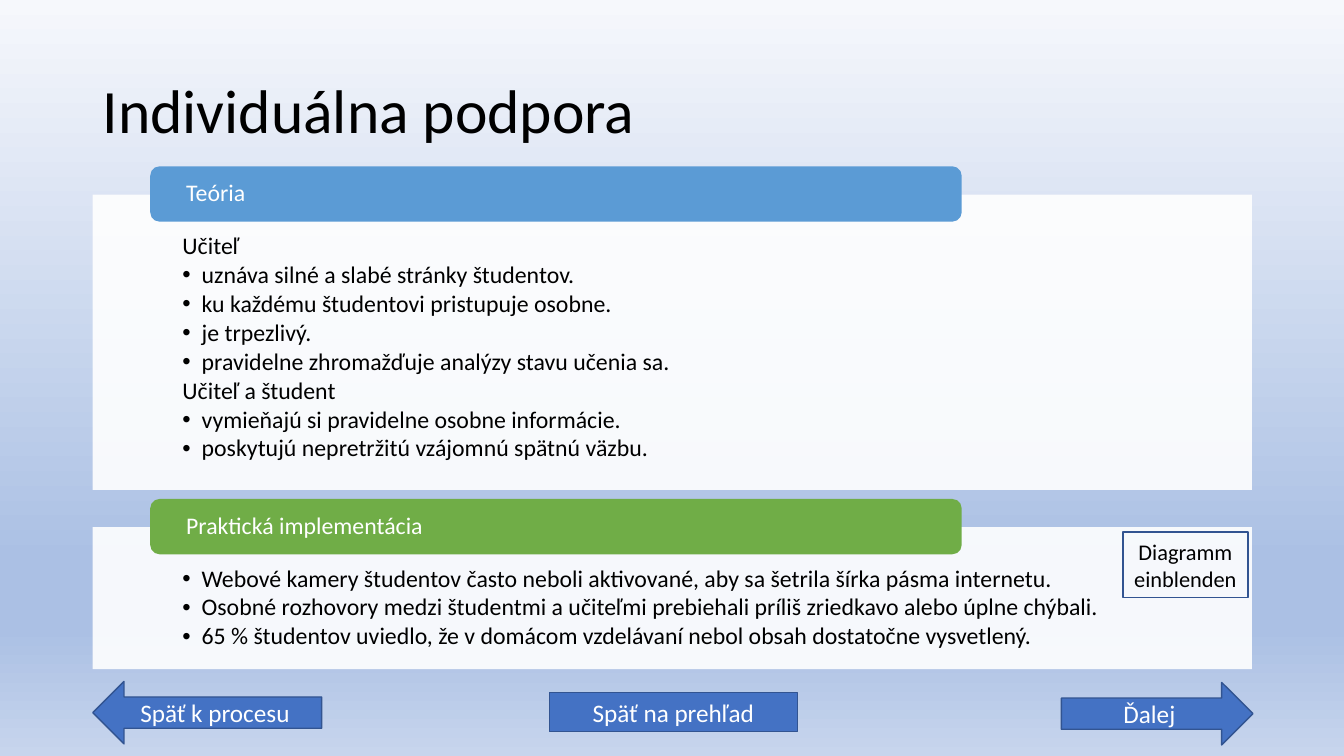
from lxml import etree
from pptx import Presentation
from pptx.dml.color import RGBColor
from pptx.enum.shapes import MSO_SHAPE as SHAPE
from pptx.enum.text import MSO_ANCHOR as ANCHOR, PP_ALIGN as ALIGN
from pptx.oxml import parse_xml
from pptx.oxml.ns import nsdecls, qn
from pptx.util import Inches, Pt

FONT = "Calibri"
BLACK, WHITE = "000000", "FFFFFF"
BLUE, GREEN, BUTTON, OUTLINE = "5B9BD5", "70AD47", "4472C4", "325491"
WIDTH, HEIGHT = Inches(13.333), Inches(7.5)
LEFT, FULL = 6.9, 86.25  # content column, in percent of the slide width
HANG = Inches(0.19)

BACKGROUND = [(0, "F6F8FC"), (74, "ABC0E4"), (83, "ABC0E4"), (100, "C7D5ED")]
# Lines starting with "•" become bullets
THEORY = [
    "Učiteľ",
    "•uznáva silné a slabé stránky študentov.",
    "•ku každému študentovi pristupuje osobne.",
    "•je trpezlivý.",
    "•pravidelne zhromažďuje analýzy stavu učenia sa.",
    "Učiteľ a študent",
    "•vymieňajú si pravidelne osobne informácie.",
    "•poskytujú nepretržitú vzájomnú spätnú väzbu.",
]
PRACTICE = [
    "•Webové kamery študentov často neboli aktivované, aby sa šetrila šírka pásma internetu.",
    "•Osobné rozhovory medzi študentmi a učiteľmi prebiehali príliš zriedkavo alebo úplne chýbali.",
    "•65 % študentov uviedlo, že v domácom vzdelávaní nebol obsah dostatočne vysvetlený.",
]


def rgb(value):
    return RGBColor.from_string(value)


def place(x, y, w, h):
    """Turn percentages of the slide into lengths."""
    return (int(WIDTH * x / 100), int(HEIGHT * y / 100),
            int(WIDTH * w / 100), int(HEIGHT * h / 100))


def set_background(slide):
    stops = "".join(f'<a:gs pos="{pos * 1000}"><a:srgbClr val="{color}"/></a:gs>'
                    for pos, color in BACKGROUND)
    slide.background.fill.solid()
    bg_pr = slide.background._cSld.find(qn("p:bg")).find(qn("p:bgPr"))
    bg_pr.replace(bg_pr.find(qn("a:solidFill")), parse_xml(
        f'<a:gradFill {nsdecls("a")}><a:gsLst>{stops}</a:gsLst>'
        '<a:lin ang="5400000" scaled="0"/></a:gradFill>'))


def add_box(slide, kind, area, fill=None, line=None):
    sp = slide.shapes.add_shape(kind, *place(*area))
    sp.shadow.inherit = False
    if fill:
        sp.fill.solid()
        sp.fill.fore_color.rgb = rgb(fill)
    else:
        sp.fill.background()
    if line:
        sp.line.color.rgb = rgb(line)
        sp.line.width = Pt(1)
    else:
        sp.line.fill.background()
    return sp


def setup_frame(sp, anchor, side, top=0.05, bottom=0.05):
    tf = sp.text_frame
    tf.word_wrap = True
    tf.vertical_anchor = anchor
    tf.margin_left = tf.margin_right = Inches(side)
    tf.margin_top, tf.margin_bottom = Inches(top), Inches(bottom)
    return tf


def write(p, text, size, color, align=ALIGN.LEFT, spacing=0.9):
    p.text = text
    p.alignment = align
    p.line_spacing = spacing
    font = p.runs[0].font
    font.name, font.size, font.color.rgb = FONT, Pt(size), rgb(color)


def set_hanging(p, bullet):
    p_pr = p._p.get_or_add_pPr()
    p_pr.set("marL", str(HANG))
    p_pr.set("indent", str(-HANG))
    if bullet:
        etree.SubElement(p_pr, qn("a:buFont")).set("typeface", "Arial")
        etree.SubElement(p_pr, qn("a:buChar")).set("char", "•")


def add_title(slide, text):
    sp = slide.shapes.add_textbox(*place(LEFT, 5.33, FULL, 19.33))
    write(setup_frame(sp, ANCHOR.MIDDLE, 0.1).paragraphs[0], text, 44, BLACK)


def add_section(slide, top, height, heading, color, lines):
    # Translucent panel with the list
    panel = add_box(slide, SHAPE.RECTANGLE, (LEFT, top, FULL, height), WHITE)
    white = panel._element.spPr.find(qn("a:solidFill"))[0]
    etree.SubElement(white, qn("a:alpha")).set("val", "90000")
    tf = setup_frame(panel, ANCHOR.TOP, 0.89, 0.39, 0.13)
    for i, line in enumerate(lines):
        p = tf.add_paragraph() if i else tf.paragraphs[0]
        set_hanging(p, line.startswith("•"))
        write(p, line.lstrip("•"), 17, BLACK)
        p.space_after = Pt(2.3)
    # Heading tab over the top edge
    tab = add_box(slide, SHAPE.ROUNDED_RECTANGLE, (11.18, top - 3.73, 60.38, 7.33), color)
    tab.adjustments[0] = 0.17
    write(setup_frame(tab, ANCHOR.MIDDLE, 0.33, 0, 0).paragraphs[0], heading, 17, WHITE)


def add_button(slide, kind, area, text, fill=BUTTON, size=18, color=WHITE):
    sp = add_box(slide, kind, area, fill, OUTLINE)
    tf = setup_frame(sp, ANCHOR.MIDDLE, 0.05)
    write(tf.paragraphs[0], text, size, color, ALIGN.CENTER, 1.0)


def main():
    prs = Presentation()
    prs.slide_width, prs.slide_height = WIDTH, HEIGHT
    slide = prs.slides.add_slide(prs.slide_layouts[6])
    set_background(slide)
    add_title(slide, "Individuálna podpora")

    # Content sections
    add_section(slide, 25.73, 39.07, "Teória", BLUE, THEORY)
    add_section(slide, 69.73, 18.8, "Praktická implementácia", GREEN, PRACTICE)

    # Navigation
    add_button(slide, SHAPE.RECTANGLE, (83.55, 70.4, 9.3, 8.67),
               "Diagramm einblenden", None, 16, BLACK)
    add_button(slide, SHAPE.RIGHT_ARROW, (78.98, 90.27, 14.25, 8.27), "Ďalej")
    add_button(slide, SHAPE.LEFT_ARROW, (LEFT, 90.13, 17.03, 8.27), "Späť k procesu")
    add_button(slide, SHAPE.RECTANGLE, (40.88, 91.6, 18.45, 5.2), "Späť na prehľad")

    prs.save("out.pptx")


if __name__ == "__main__":
    main()
